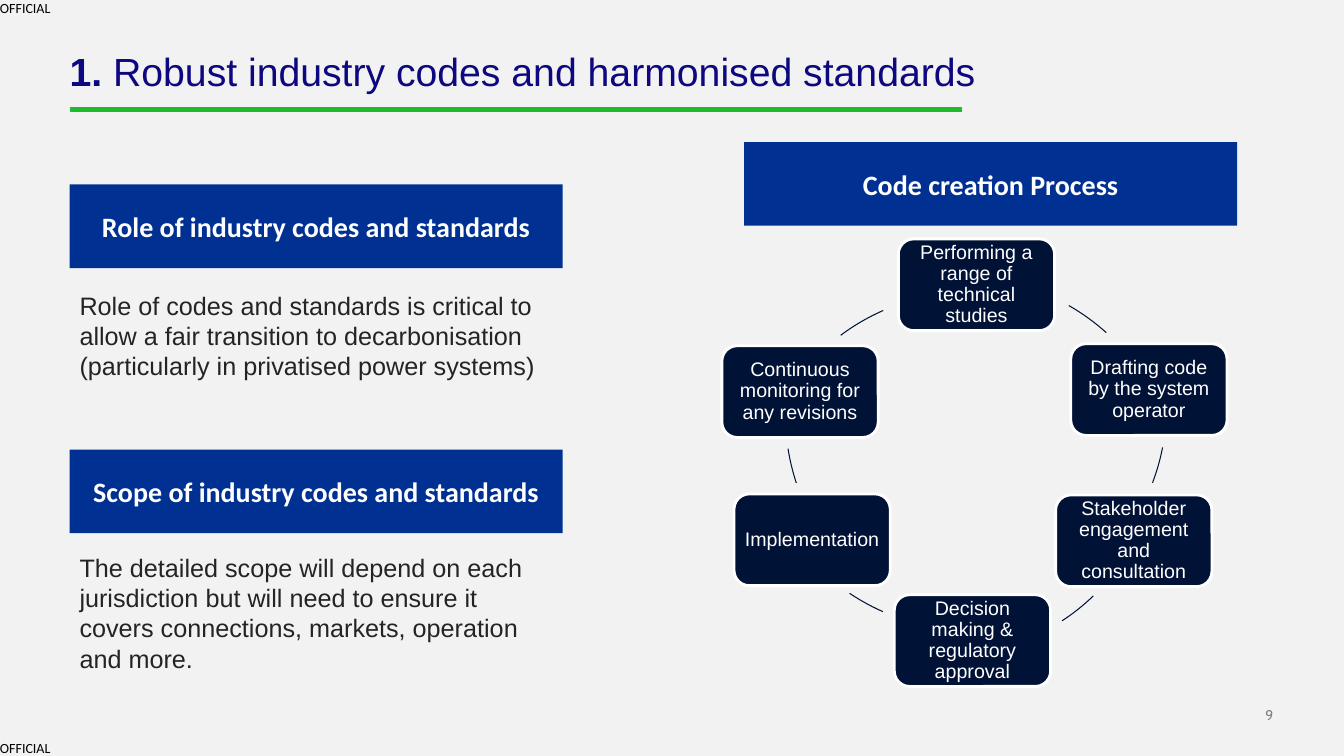
import pptx
import pptx.util
import pptx.dml.color
import pptx.enum.shapes
import pptx.enum.text

Inches, Pt = pptx.util.Inches, pptx.util.Pt
SHAPE = pptx.enum.shapes.MSO_SHAPE
ANCHOR = pptx.enum.text.MSO_ANCHOR
ALIGN = pptx.enum.text.PP_ALIGN
BOX_INSETS = (0.1, 0.05)


def rgb(value):
    return pptx.dml.color.RGBColor.from_string(value)


def add_run(p, text, size=18, font="Arial", color="242424", bold=False):
    r = p.add_run()
    r.text = text
    r.font.size, r.font.name, r.font.bold = Pt(size), font, bold
    r.font.color.rgb = rgb(color)


class Deck:
    """Holds the colours and the current slide."""
    navy, blue, green, white = "001236", "003192", "1CBC2B", "FFFFFF"
    title_color, background = "0D0780", "F2F2F2"

    def __init__(self):
        self.prs = pptx.Presentation()
        self.prs.slide_width, self.prs.slide_height = Inches(13.33), Inches(7.5)
        self.s = self.prs.slides.add_slide(self.prs.slide_layouts[5])
        fill = self.s.background.fill
        fill.solid()
        fill.fore_color.rgb = rgb(self.background)

    def frame(self, sp, insets=(0, 0), anchor=ANCHOR.TOP, align=ALIGN.LEFT,
              spacing=None, wrap=True):
        tf = sp.text_frame
        tf.word_wrap, tf.vertical_anchor = wrap, anchor
        tf.auto_size = pptx.enum.text.MSO_AUTO_SIZE.NONE
        tf.margin_left = tf.margin_right = Inches(insets[0])
        tf.margin_top = tf.margin_bottom = Inches(insets[1])
        p = tf.paragraphs[0]
        p.alignment, p.line_spacing = align, spacing
        return p

    def title(self, box, number, text):
        sp = self.s.shapes.title
        sp.left, sp.top, sp.width, sp.height = map(Inches, box)
        p = self.frame(sp, spacing=0.9)
        add_run(p, number, size=28, color=self.title_color, bold=True)
        add_run(p, text, size=28, color=self.title_color)

    def text(self, box, text, insets=(0, 0), anchor=ANCHOR.TOP,
             align=ALIGN.LEFT, wrap=True, **style):
        sp = self.s.shapes.add_textbox(*map(Inches, box))
        add_run(self.frame(sp, insets, anchor, align, wrap=wrap), text, **style)

    def shape(self, kind, box, fill=None, line=None, width=0.75):
        sp = self.s.shapes.add_shape(kind, *map(Inches, box))
        sp.shadow.inherit = False
        if fill:
            sp.fill.solid()
            sp.fill.fore_color.rgb = rgb(fill)
        else:
            sp.fill.background()
        if line:
            sp.line.color.rgb, sp.line.width = rgb(line), Pt(width)
        else:
            sp.line.fill.background()
        return sp

    def banner(self, left, top, text):
        sp = self.shape(SHAPE.RECTANGLE, (left, top, 4.89, 0.83), self.blue)
        p = self.frame(sp, BOX_INSETS, ANCHOR.MIDDLE, ALIGN.CENTER)
        add_run(p, text, size=20, font="Calibri", color=self.white, bold=True)

    def step(self, left, top, text):
        sp = self.shape(SHAPE.ROUNDED_RECTANGLE, (left, top, 1.55, 0.91),
                        self.navy, self.white, 2)
        p = self.frame(sp, (0.06, 0.06), ANCHOR.MIDDLE, ALIGN.CENTER, 0.9)
        add_run(p, text, size=14, color=self.white)

    def arc(self, left, top, start, end, diameter=4.28):
        """Draws part of a circle, clockwise between two angles in degrees."""
        sp = self.shape(SHAPE.ARC, (left, top, diameter, diameter), line=self.navy)
        # An adjustment of 0.6 is one degree
        sp.adjustments[0], sp.adjustments[1] = start * 0.6, end * 0.6


def main():
    deck = Deck()

    # Slide number and classification marks
    deck.text((12.21, 7.01, 0.42, 0.17), "9", anchor=ANCHOR.BOTTOM, align=ALIGN.RIGHT,
              size=10, font="Cabin", color="7F7F7F")
    for top in (7.34, 0):
        deck.text((0, top, 0.53, 0.17), "OFFICIAL", wrap=False,
                  size=10, font="Calibri", color="000000")

    # Title and its rule
    deck.title((0.69, 0.52, 9.33, 0.42), "1. ",
               "Robust industry codes and harmonised standards")
    deck.shape(SHAPE.RECTANGLE, (0.7, 1.07, 8.84, 0.04), deck.green, deck.green)

    # Code creation cycle: each step, then the arc that leads on from it
    cycle = [
        (8.91, 2.37, "Performing a range of technical studies",
         (7.4, 2.75, 299.7, 312)),
        (10.62, 3.41, "Drafting code by the system operator",
         (7.29, 1.89, 11, 20.8)),
        (10.47, 4.91, "Stakeholder engagement and consultation",
         (7.22, 2.23, 46.1, 56.7)),
        (8.87, 5.9, "Decision making & regulatory approval",
         (7.48, 1.97, 113.8, 123.9)),
        (7.28, 4.9, "Implementation",
         (7.79, 1.98, 161.7, 171.1)),
        (7.16, 3.43, "Continuous monitoring for any revisions",
         (7.48, 2.9, 233.2, 246.3)),
    ]
    for left, top, text, arc in cycle:
        deck.step(left, top, text)
        deck.arc(*arc)

    # Section banners
    deck.banner(0.69, 1.83, "Role of industry codes and standards")
    deck.banner(0.69, 4.46, "Scope of industry codes and standards")
    deck.banner(7.38, 1.41, "Code creation Process")

    # Section texts
    deck.text((0.69, 2.83, 4.89, 1.01),
              "Role of codes and standards is critical to allow a fair transition to "
              "decarbonisation (particularly in privatised power systems)",
              insets=BOX_INSETS)
    deck.text((0.69, 5.43, 4.89, 1.31),
              "The detailed scope will depend on each jurisdiction but will need to "
              "ensure it covers connections, markets, operation and more.",
              insets=BOX_INSETS)

    deck.prs.save("out.pptx")


if __name__ == "__main__":
    main()
